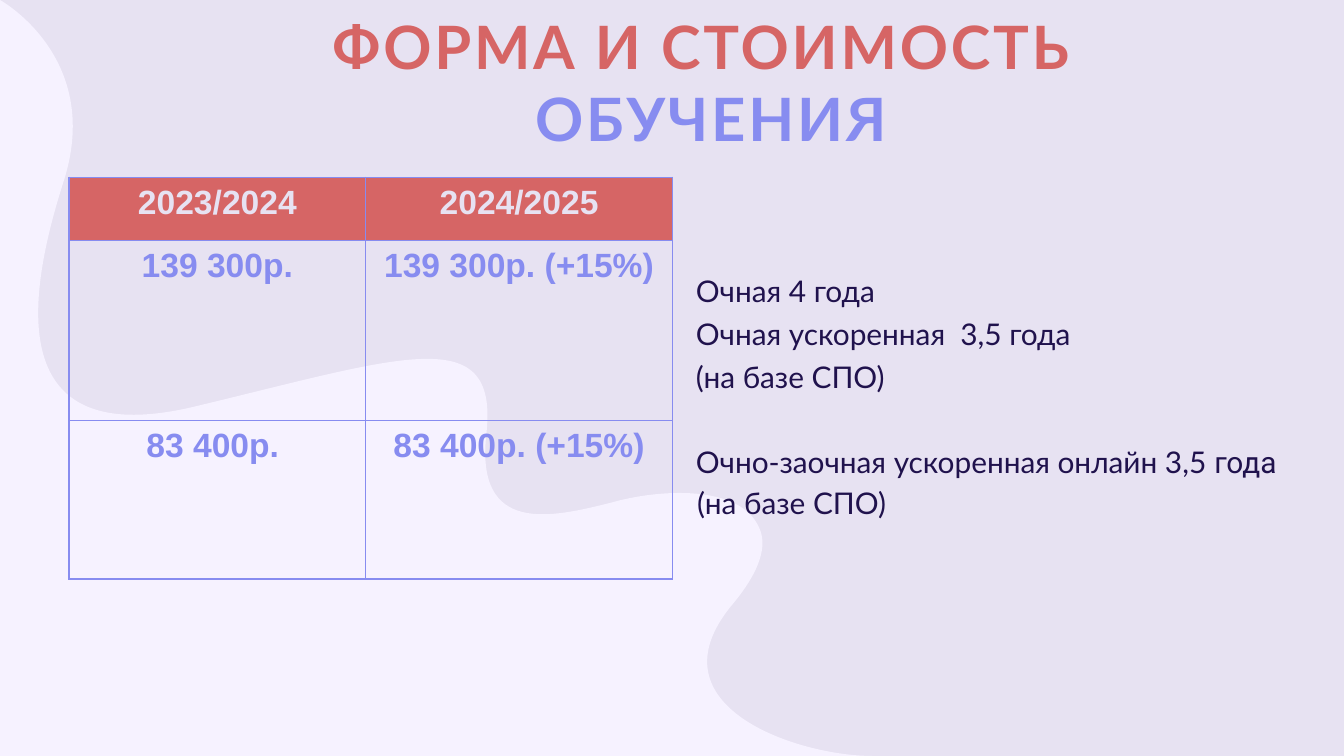
from lxml import etree
from pptx import Presentation
from pptx import util as u
from pptx.dml.color import RGBColor
from pptx.enum import text as t
from pptx.oxml.ns import qn

PX = 4572  # EMU in one px, 200 px to the inch
RED, BLUE, NAVY = "D66565", "878CF0", "20124D"
GREY, PALE = "E7E2F2", "F6F2FF"


def px(n):
    return u.Emu(n * PX)


def paint(fill, tone):
    fill.solid()
    fill.fore_color.rgb = RGBColor.from_string(tone)


def put(para, words, size, face, tone, bold=False):
    """Add one run to a paragraph."""
    run = para.add_run()
    run.text = words
    font = run.font
    font.size, font.name, font.bold = u.Pt(size), face, bold
    paint(font.fill, tone)
    return run


def inset(para, left, first):
    props = para._p.get_or_add_pPr()
    props.set("marL", str(px(left)))
    props.set("indent", str(px(first)))


def add_box(slide, box, anchor, top=20):
    frame = slide.shapes.add_textbox(*map(px, box)).text_frame
    frame.word_wrap = True
    frame.vertical_anchor = anchor
    frame.margin_left = frame.margin_right = frame.margin_bottom = px(20)
    frame.margin_top = px(top)
    return frame


def curve(shape, count):
    """Turn the first lines of an outline, three by three, into curves."""
    lines = list(shape._element.iter(qn("a:lnTo")))[:3 * count]
    for i in range(0, len(lines), 3):
        first, *rest = lines[i:i + 3]
        first.tag = qn("a:cubicBezTo")
        for line in rest:
            first.append(line[0])
            line.getparent().remove(line)


def add_wave(slide, box):
    left, top, wide, high = box
    curves = [
        [(52, 404), (-16, 676), (286, 606)],
        [(596, 532), (742, 476), (724, 644)],
        [(706, 798), (822, 770), (910, 748)],
        [(980, 728), (1102, 720), (1130, 786)],
        [(1142, 812), (1132, 850), (1088, 902)],
        [(966, 1052), (1188, high), (wide, high)],
    ]
    # the top left curve comes first, so that all the curves are in a row
    dots = [(0, 0), (0, 0), (152, 84), (96, 266)]
    dots += [dot for part in curves for dot in part]
    dots.append((0, high))
    dots = [(left + x, top + y) for x, y in dots]
    pen = slide.shapes.build_freeform(*dots[0], scale=PX)
    pen.add_line_segments(dots[1:], close=True)
    wave = pen.convert_to_shape()
    curve(wave, len(curves) + 1)
    wave.shadow.inherit = False
    paint(wave.fill, PALE)
    wave.line.fill.background()


def add_title(slide, box):
    para = add_box(slide, box, t.MSO_ANCHOR.BOTTOM).paragraphs[0]
    para.alignment = t.PP_ALIGN.CENTER
    inset(para, 2, 0)
    for words, tone in [("ФОРМА И СТОИМОСТЬ  ", RED), ("ОБУЧЕНИЯ", BLUE)]:
        run = put(para, words, 32, "Lato", tone, True)
        run.font._element.set("spc", "150")


def add_forms(slide, box):
    """List the forms of study, in line with the price rows."""
    frame = add_box(slide, box, t.MSO_ANCHOR.MIDDLE, top=74)
    lines = [
        (1, 0.9, [("Очная 4 года", "Lato")]),
        (1.15, 0.9, [("Очная ускоренная  3,5 года", "Lato")]),
        (1.15, 0.9, [("(на базе СПО)", "Lato")]),
        (1.15, 23.5, [("Очно-заочная ускоренная онлайн 3,5 ", "Lato"),
                      ("года ", "Roboto"), ("(на базе СПО)", "Lato")]),
    ]
    for i, (pitch, gap, runs) in enumerate(lines):
        para = frame.add_paragraph() if i else frame.paragraphs[0]
        para.line_spacing, para.space_before = pitch, u.Pt(gap)
        inset(para, 2, -2)
        for words, face in runs:
            put(para, words, 16, face, NAVY)


def edge(cell, tone):
    """Draw a 1 pt border on all sides of a cell."""
    props = cell._tc.get_or_add_tcPr()
    for side in ("lnL", "lnR", "lnT", "lnB"):
        line = etree.SubElement(props, qn("a:" + side), w=str(u.Pt(1)))
        fill = etree.SubElement(line, qn("a:solidFill"))
        etree.SubElement(fill, qn("a:srgbClr"), val=tone)


def add_prices(slide, box):
    rows = [
        (94, ["2023/2024", "2024/2025"]),
        (268, ["139 300р.", "139 300р. (+15%)"]),
        (236, ["83 400р. ", "83 400р. (+15%)"]),
    ]
    table = slide.shapes.add_table(len(rows), 2, *map(px, box)).table
    table.first_row = table.horz_banding = False
    for col, wide in zip(table.columns, (441, 457)):
        col.width = px(wide)
    for i, (high, texts) in enumerate(rows):
        table.rows[i].height = px(high)
        for j, words in enumerate(texts):
            cell = table.cell(i, j)
            edge(cell, BLUE)
            if i:
                cell.fill.background()
            else:
                paint(cell.fill, RED)
            para = cell.text_frame.paragraphs[0]
            para.alignment = t.PP_ALIGN.CENTER
            put(para, words, 18, "Arial", BLUE if i else GREY, True)


def main():
    deck = Presentation()
    deck.slide_width, deck.slide_height = px(2000), px(1125)
    slide = deck.slides.add_slide(deck.slide_layouts[6])
    paint(slide.background.fill, GREY)
    add_wave(slide, (0, 0, 1298, 1125))
    add_title(slide, (228, 122, 1658, 126))
    add_forms(slide, (1016, 264, 966, 598))
    add_prices(slide, (103, 264, 898, 598))
    deck.save("out.pptx")


if __name__ == "__main__":
    main()
